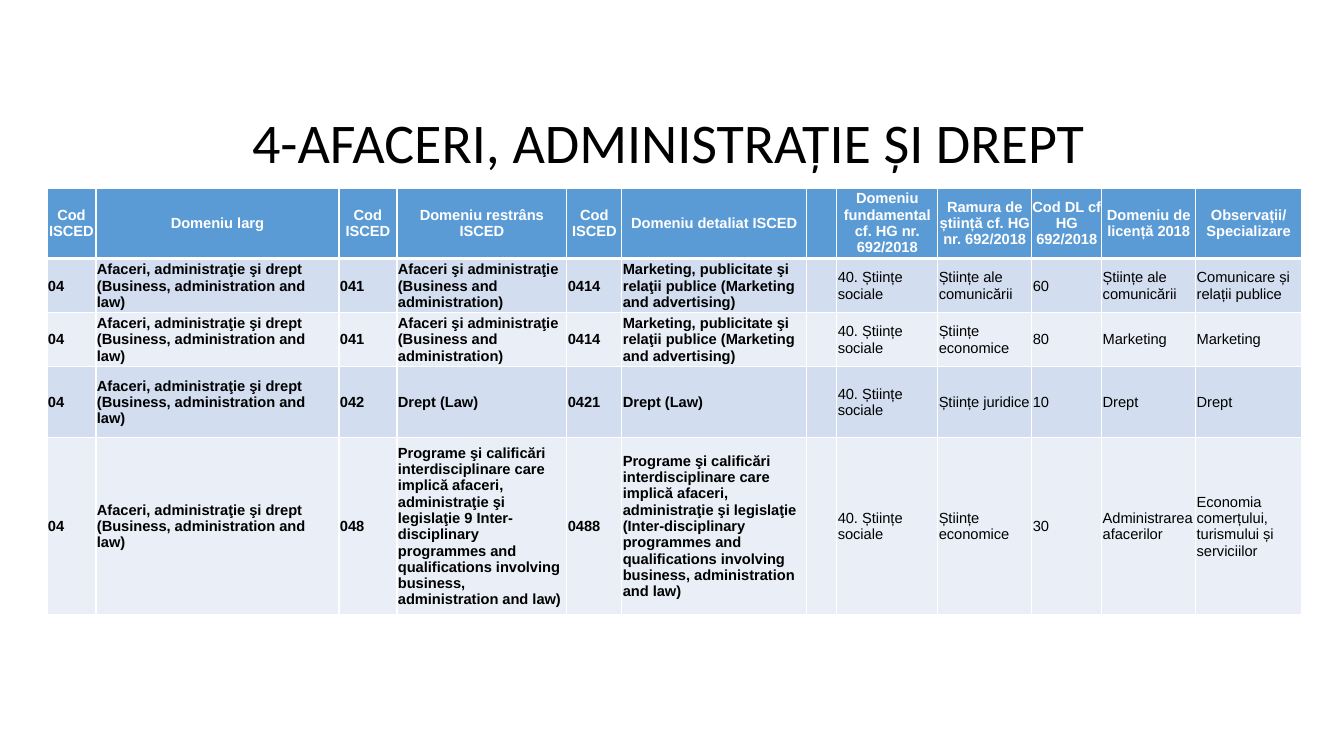
import dataclasses

import pptx
import pptx.dml.color
import pptx.enum.text
import pptx.oxml
import pptx.oxml.ns
import pptx.util

EMU_PER_PX = 914400 / 100.8
ANCHOR = pptx.enum.text.MSO_ANCHOR
ALIGN = pptx.enum.text.PP_ALIGN
WHITE, BLACK = "FFFFFF", "000000"
BROAD_FIELD = "Afaceri, administraţie şi drept (Business, administration and law)"
BUSINESS = "Afaceri şi administraţie (Business and administration)"
MARKETING = "Marketing, publicitate şi relaţii publice (Marketing and advertising)"
INTERDISCIPLINARY = (
    "Programe şi calificări interdisciplinare care implică afaceri, "
    "administraţie şi legislaţie {}Inter-disciplinary programmes and "
    "qualifications involving business, administration and law)"
)


@dataclasses.dataclass(frozen=True)
class Column:
    heading: str
    width: int
    bold: bool = False


@dataclasses.dataclass(frozen=True)
class Field:
    height: int
    narrow_code: str
    narrow: str
    detailed_code: str
    detailed: str
    branch: str
    licence_code: str
    licence: str
    remarks: str

    def texts(self) -> list[str]:
        return [
            "04", BROAD_FIELD, self.narrow_code, self.narrow,
            self.detailed_code, self.detailed, "", "40. Științe sociale",
            self.branch, self.licence_code, self.licence, self.remarks,
        ]


@dataclasses.dataclass(frozen=True)
class CellStyle:
    fill: str
    color: str
    bold: bool
    inset: int
    align: ALIGN
    top_pt: int
    bottom_pt: int


COLUMNS = [
    Column("Cod ISCED", 49, True),
    Column("Domeniu larg", 243, True),
    Column("Cod ISCED", 58, True),
    Column("Domeniu restrâns ISCED", 170, True),
    Column("Cod ISCED", 55, True),
    Column("Domeniu detaliat ISCED", 185, True),
    Column("", 30),
    Column("Domeniu fundamental cf. HG nr. 692/2018", 101),
    Column("Ramura de știință cf. HG nr. 692/2018", 94),
    Column("Cod DL cf HG 692/2018", 70),
    Column("Domeniu de licență 2018", 94),
    Column("Observații/ Specializare", 106),
]
FIELDS = [
    Field(53, "041", BUSINESS, "0414", MARKETING, "Științe ale comunicării",
          "60", "Științe ale comunicării", "Comunicare și relații publice"),
    Field(54, "041", BUSINESS, "0414", MARKETING, "Științe economice",
          "80", "Marketing", "Marketing"),
    Field(71, "042", "Drept (Law)", "0421", "Drept (Law)", "Științe juridice",
          "10", "Drept", "Drept"),
    Field(164, "048", INTERDISCIPLINARY.format("9 "), "0488",
          INTERDISCIPLINARY.format("("), "Științe economice",
          "30", "Administrarea afacerilor",
          "Economia comerțului, turismului și serviciilor"),
]
HEADER_HEIGHT = 70
BANDS = ["D2DEEF", "EAEFF7"]


def px(length: int) -> pptx.util.Emu:
    return pptx.util.Emu(round(length * EMU_PER_PX))


def rgb(color: str) -> pptx.dml.color.RGBColor:
    return pptx.dml.color.RGBColor.from_string(color)


def set_font(paragraph, name: str, size: float, color: str, bold: bool) -> None:
    font = paragraph.font
    font.name = name
    font.size = pptx.util.Pt(size)
    font.bold = bold
    font.color.rgb = rgb(color)


def add_borders(cell, top_pt: int, bottom_pt: int) -> None:
    properties = cell._tc.get_or_add_tcPr()
    for side, width in {"L": 1, "R": 1, "T": top_pt, "B": bottom_pt}.items():
        properties.append(pptx.oxml.parse_xml(
            f'<a:ln{side} {pptx.oxml.ns.nsdecls("a")} w="{pptx.util.Pt(width)}">'
            f'<a:solidFill><a:srgbClr val="{WHITE}"/></a:solidFill></a:ln{side}>'
        ))


def fill_cell(cell, text: str, style: CellStyle) -> None:
    add_borders(cell, style.top_pt, style.bottom_pt)
    cell.fill.solid()
    cell.fill.fore_color.rgb = rgb(style.fill)
    cell.margin_left = cell.margin_right = cell.margin_top = px(style.inset)
    cell.margin_bottom = 0
    cell.vertical_anchor = ANCHOR.MIDDLE
    cell.text = text
    paragraph = cell.text_frame.paragraphs[0]
    paragraph.alignment = style.align
    set_font(paragraph, "Arial", 10.5, style.color, style.bold)


def add_title(slide) -> None:
    title = slide.shapes.add_textbox(px(95), px(109), px(1159), px(73))
    frame = title.text_frame
    frame.word_wrap = True
    frame.vertical_anchor = ANCHOR.MIDDLE
    paragraph = frame.paragraphs[0]
    paragraph.text = "4-AFACERI, ADMINISTRAȚIE ȘI DREPT "
    paragraph.alignment = ALIGN.CENTER
    paragraph.line_spacing = 0.9
    set_font(paragraph, "Calibri", 40, BLACK, False)


def add_classification(slide) -> None:
    heights = [HEADER_HEIGHT] + [field.height for field in FIELDS]
    classification = slide.shapes.add_table(
        len(heights), len(COLUMNS), px(47), px(188),
        px(sum(column.width for column in COLUMNS)), px(sum(heights)),
    ).table
    for row, height in zip(classification.rows, heights):
        row.height = px(height)
    header = CellStyle("5B9BD5", WHITE, True, 0, ALIGN.CENTER, 1, 3)
    for index, column in enumerate(COLUMNS):
        classification.columns[index].width = px(column.width)
        fill_cell(classification.cell(0, index), column.heading, header)
    for number, field in enumerate(FIELDS):
        top_pt = 3 if number == 0 else 1
        for index, (column, text) in enumerate(zip(COLUMNS, field.texts())):
            style = CellStyle(BANDS[number % 2], BLACK, column.bold, 1,
                              ALIGN.LEFT, top_pt, 1)
            fill_cell(classification.cell(number + 1, index), text, style)


def main() -> None:
    presentation = pptx.Presentation()
    presentation.slide_width = px(1344)
    presentation.slide_height = px(756)
    slide = presentation.slides.add_slide(presentation.slide_layouts[6])
    add_title(slide)
    add_classification(slide)
    presentation.save("out.pptx")


if __name__ == "__main__":
    main()
